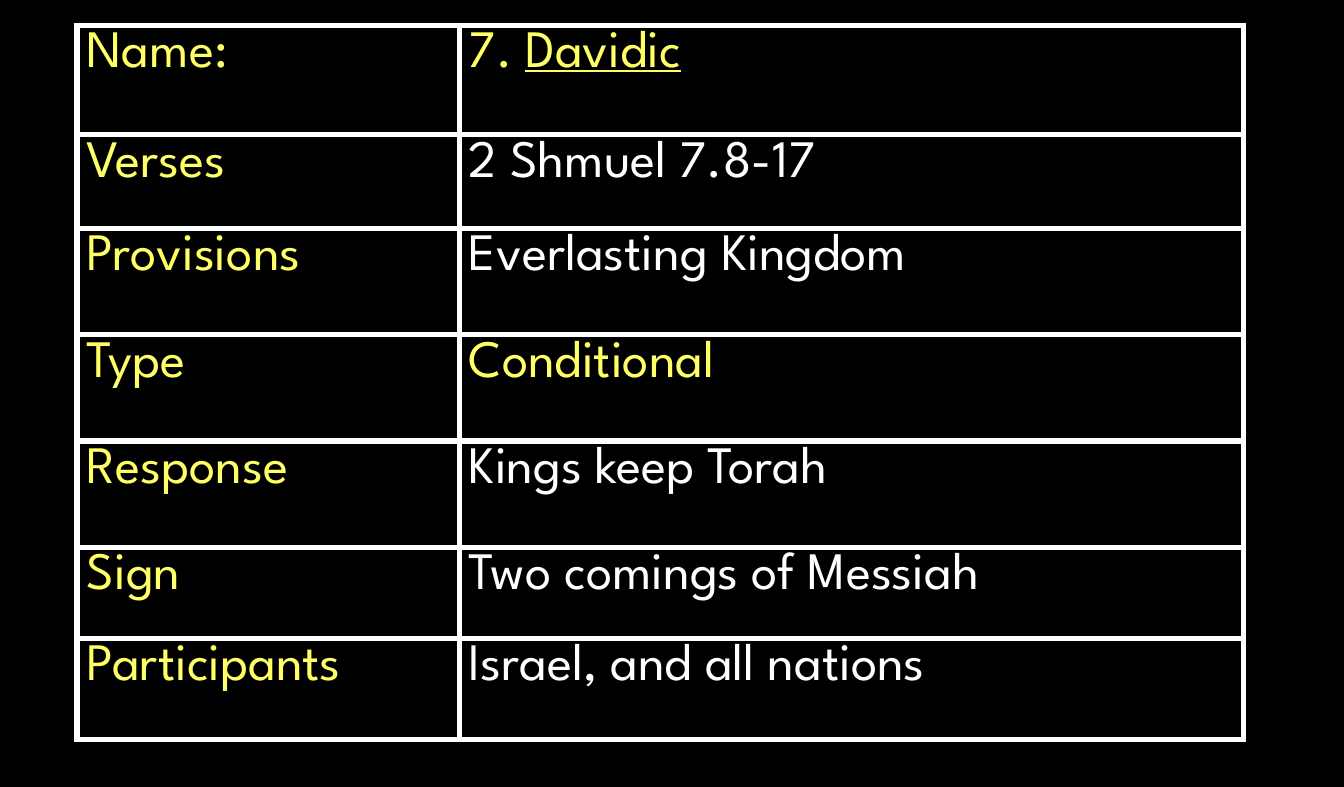
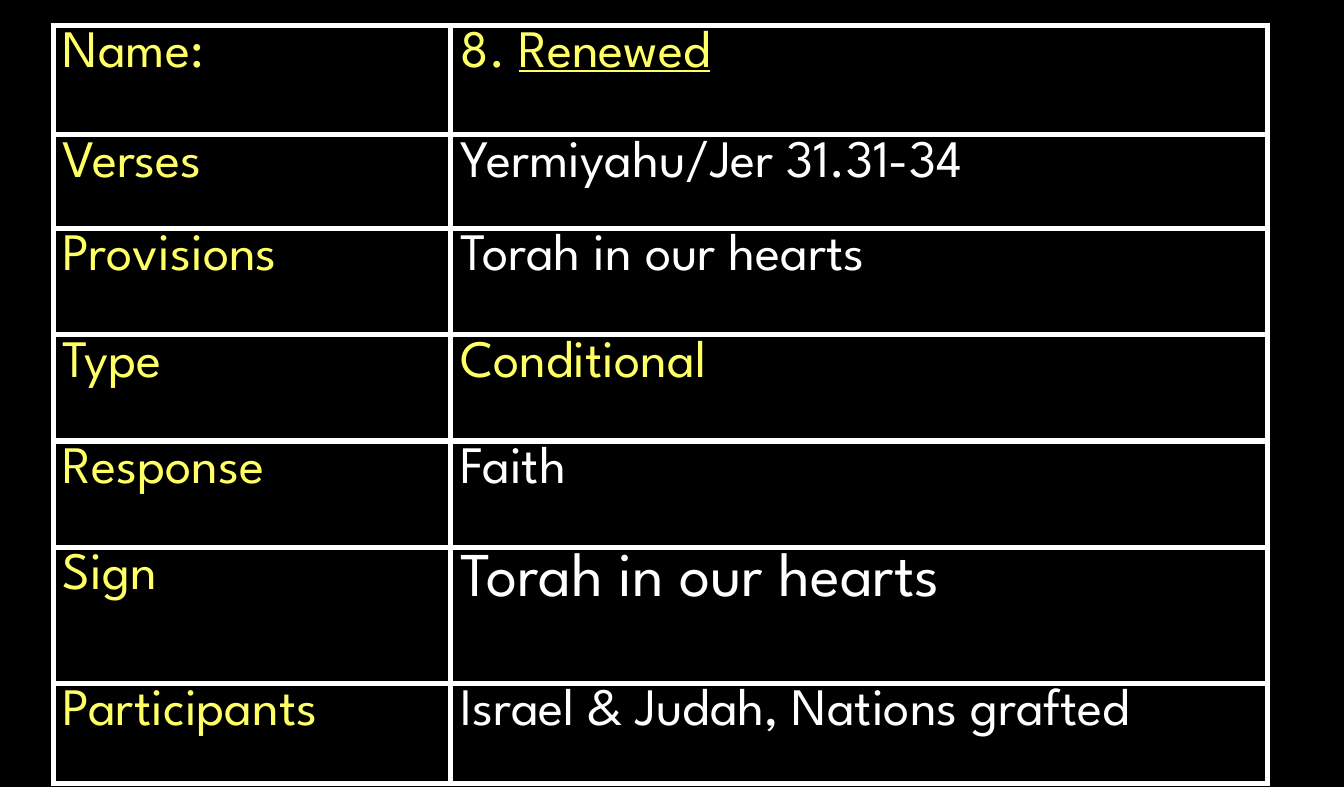
from lxml import etree
from pptx import Presentation
from pptx.dml.color import RGBColor as RGB
from pptx.oxml.ns import qn
from pptx.util import Pt

FONT = "League Spartan"
TEXT_SIZE = 27
COLORS = {"back": "000000", "label": "FFFF66", "value": "FFFFFF", "border": "FFFFFF"}
LABELS = ["Name:", "Verses", "Provisions", "Type", "Response", "Sign", "Participants"]
HIGHLIGHTED = {"Name:", "Type"}
ROW_HEIGHTS = [56.2, 48.2, 54.7, 54.7, 54.7, 46.8, 51.8]
TABLE_TOP = 13


class Deck:
    """Holds the shared style and the current slide."""

    def __init__(self, width, height):
        self.prs = Presentation()
        self.prs.slide_width, self.prs.slide_height = Pt(width), Pt(height)
        self.slide = None

    def add_slide(self):
        self.slide = self.prs.slides.add_slide(self.prs.slide_layouts[6])
        fill = self.slide.background.fill
        fill.solid()
        fill.fore_color.rgb = RGB.from_string(COLORS["back"])

    def add_borders(self, cell, width=3):
        tcPr = cell._tc.get_or_add_tcPr()
        for side in ("a:lnL", "a:lnR", "a:lnT", "a:lnB"):
            ln = etree.SubElement(tcPr, qn(side), w=str(Pt(width)))
            fill = etree.SubElement(ln, qn("a:solidFill"))
            etree.SubElement(fill, qn("a:srgbClr"), val=COLORS["border"])

    def fill_cell(self, cell, parts, color, size=TEXT_SIZE):
        """Write the parts as runs; every part after the first is underlined."""
        self.add_borders(cell)
        cell.fill.solid()
        cell.fill.fore_color.rgb = RGB.from_string(COLORS["back"])
        cell.margin_left = cell.margin_right = Pt(5)
        cell.margin_top = cell.margin_bottom = Pt(2.9)
        p = cell.text_frame.paragraphs[0]
        for i, part in enumerate(parts):
            r = p.add_run()
            r.text = part
            r.font.name, r.font.size = FONT, Pt(size)
            r.font.color.rgb = RGB.from_string(COLORS[color])
            if i:
                r.font.underline = True

    def add_covenant(self, left, col_widths, values, heights, sign_size):
        shape = self.slide.shapes.add_table(
            len(LABELS), 2, Pt(left), Pt(TABLE_TOP), Pt(sum(col_widths)), Pt(sum(heights)))
        table = shape.table
        table.first_row = table.horz_banding = False
        for column, width in zip(table.columns, col_widths):
            column.width = Pt(width)
        for row, height, label, value in zip(table.rows, heights, LABELS, values):
            row.height = Pt(height)
            color = "label" if label in HIGHLIGHTED else "value"
            size = sign_size if label == "Sign" else TEXT_SIZE
            self.fill_cell(row.cells[0], [label], "label")
            self.fill_cell(row.cells[1], value, color, size)


def main():
    deck = Deck(691.2, 404.64)

    # Davidic covenant
    deck.add_slide()
    deck.add_covenant(39.6, [196.6, 403.2], [
        ["7. ", "Davidic"], ["2 Shmuel 7.8-17"], ["Everlasting Kingdom"],
        ["Conditional"], ["Kings keep Torah"], ["Two comings of Messiah"],
        ["Israel, and all nations"],
    ], ROW_HEIGHTS, TEXT_SIZE)

    # Renewed covenant, with a taller row for the larger sign
    deck.add_slide()
    deck.add_covenant(27.4, [204.5, 419.8], [
        ["8. ", "Renewed"], ["Yermiyahu/Jer 31.31-34"], ["Torah in our hearts"],
        ["Conditional"], ["Faith"], ["Torah in our hearts"],
        ["Israel & Judah, Nations grafted"],
    ], ROW_HEIGHTS[:5] + [69.8] + ROW_HEIGHTS[6:], 32)

    deck.prs.save("out.pptx")


if __name__ == "__main__":
    main()
